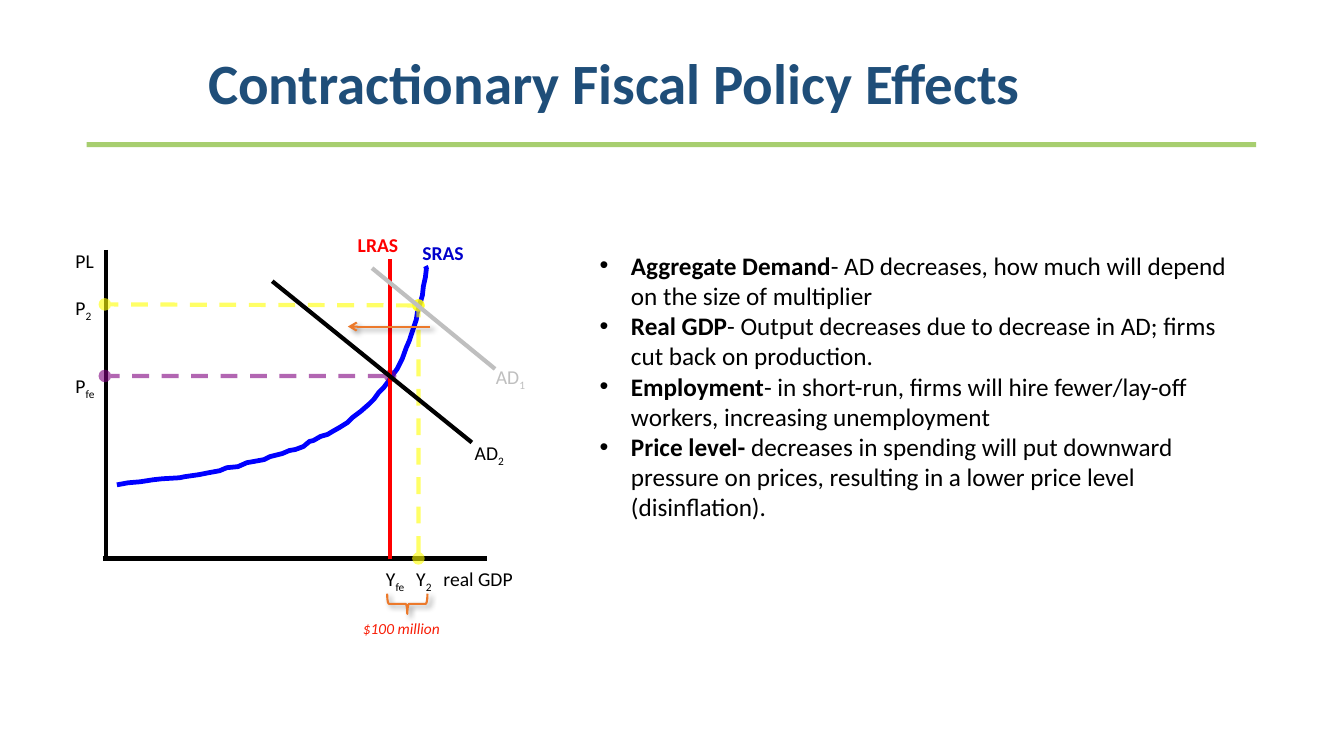
from lxml import etree
from pptx import Presentation
from pptx import util as u
from pptx.dml.color import RGBColor
from pptx.enum import dml, shapes, text
from pptx.oxml import ns

COLOURS = {
    "title": "1F4E79", "rule": "A7CE6F", "black": "000000", "red": "FF0000",
    "sras label": "0000CC", "sras": "0000FF", "purple": "800080",
    "yellow": "FFFF00", "grey": "BFBFBF", "orange": "EC792B", "gap": "F81D06",
}
RGB = {name: RGBColor.from_string(value) for name, value in COLOURS.items()}


def sub(parent, tag, **attributes):
    return etree.SubElement(parent, ns.qn(tag), attributes)


def cast_shadow(effects):
    """Fill an empty effect list with a soft shadow down to the right."""
    shadow = sub(effects, "a:outerShdw", blurRad=str(u.Pt(4)), dist=str(u.Pt(3)),
                 dir="2700000", rotWithShape="0")
    sub(sub(shadow, "a:srgbClr", val=COLOURS["black"]), "a:alpha", val="40000")


prs = Presentation()
prs.slide_width, prs.slide_height = u.Inches(13.33), u.Inches(7.5)
slide = prs.slides.add_slide(prs.slide_layouts[5])

# Title and rule
title = slide.shapes.title
title.left, title.top = u.Inches(1.09), u.Inches(0.55)
title.width, title.height = u.Inches(10), u.Inches(0.67)
title_frame = title.text_frame
title_frame.text = "Contractionary Fiscal Policy Effects"
title_frame.auto_size = text.MSO_AUTO_SIZE.NONE
title_frame.vertical_anchor = text.MSO_ANCHOR.TOP
title_frame.margin_left = title_frame.margin_right = u.Inches(0.05)
title_frame.margin_top = title_frame.margin_bottom = u.Inches(0.05)
heading = title_frame.paragraphs[0]
heading.alignment = text.PP_ALIGN.CENTER
heading.line_spacing = 0.8
heading.font.name, heading.font.size, heading.font.bold = "Calibri", u.Pt(40.7), True
heading.font.color.rgb = RGB["title"]

rule = slide.shapes.add_shape(shapes.MSO_SHAPE.RECTANGLE, u.Inches(0.86), u.Inches(1.41),
                              u.Inches(11.6), u.Inches(0.05))
rule.shadow.inherit = False
rule.fill.solid()
rule.fill.fore_color.rgb = RGB["rule"]
rule.line.fill.background()

# Short-run aggregate supply curve
sras_points = [
    (1.16, 4.81), (1.27, 4.79), (1.39, 4.78), (1.52, 4.76), (1.61, 4.75), (1.78, 4.74),
    (1.83, 4.73), (1.97, 4.71), (2.07, 4.69), (2.18, 4.67), (2.25, 4.64), (2.36, 4.63),
    (2.45, 4.59), (2.51, 4.58), (2.62, 4.56), (2.68, 4.53), (2.8, 4.5), (2.87, 4.47),
    (2.93, 4.46), (3.01, 4.43), (3.07, 4.38), (3.11, 4.37), (3.18, 4.33), (3.25, 4.31),
    (3.3, 4.28), (3.37, 4.24), (3.45, 4.19), (3.5, 4.14), (3.58, 4.08), (3.66, 4.01),
    (3.71, 3.96), (3.76, 3.89), (3.81, 3.84), (3.87, 3.76), (3.91, 3.7), (3.94, 3.66),
    (3.99, 3.56), (4.03, 3.45), (4.06, 3.38), (4.1, 3.26), (4.13, 3.17), (4.14, 3.1),
    (4.17, 3), (4.19, 2.93), (4.2, 2.84), (4.22, 2.75), (4.23, 2.66), (4.22, 2.64),
]
sras_emu = [(u.Inches(x), u.Inches(y)) for x, y in sras_points]
builder = slide.shapes.build_freeform(*sras_emu[0])
builder.add_line_segments(sras_emu[1:], close=False)
sras = builder.convert_to_shape()
sras.shadow.inherit = False
sras.fill.background()
sras.line.color.rgb = RGB["sras"]
sras.line.width = u.Pt(3.39)

# Axes, guides, curves and the arrow of the demand shift: start, end, colour, style
graph_lines = [
    ((1.05, 2.48), (1.05, 5.53), "black", "solid"),
    ((1.02, 5.54), (4.83, 5.54), "black", "solid"),
    ((3.87, 3.73), (1.04, 3.73), "purple", "guide"),
    ((4.15, 3.03), (1.04, 3.02), "yellow", "guide"),
    ((4.15, 5.54), (4.15, 3.03), "yellow", "guide"),
    ((3.87, 5.55), (3.87, 2.57), "red", "solid"),
    ((3.69, 2.66), (4.91, 3.66), "grey", "solid"),
    ((2.7, 2.79), (4.68, 4.39), "black", "solid"),
    ((4.27, 3.24), (3.45, 3.24), "orange", "arrow"),
]
for start, end, colour, style in graph_lines:
    line = slide.shapes.add_connector(shapes.MSO_CONNECTOR.STRAIGHT,
                                      *(u.Inches(n) for n in start + end))
    line.line.color.rgb = RGB[colour]
    line.line.width = u.Pt(1.5 if style == "arrow" else 3)
    properties = line._element.spPr
    outline = line.line._get_or_add_ln()
    effects = sub(properties, "a:effectLst")
    if style == "guide":
        line.line.dash_style = dml.MSO_LINE.DASH
        sub(outline.find(".//" + ns.qn("a:srgbClr")), "a:alpha", val="60000")
        sub(outline, "a:headEnd", type="oval")
        sub(outline, "a:tailEnd", type="oval")
    elif style == "arrow":
        sub(outline, "a:tailEnd", type="arrow")
        cast_shadow(effects)

# Brace under the output gap
brace = slide.shapes.add_shape(shapes.MSO_SHAPE.LEFT_BRACE, u.Inches(3.94), u.Inches(5.79),
                               u.Inches(0.2), u.Inches(0.4))
brace.rotation = 270
brace.fill.background()
brace.line.color.rgb = RGB["orange"]
brace.line.width = u.Pt(1.5)
brace.shadow.inherit = False
cast_shadow(brace._element.spPr.find(ns.qn("a:effectLst")))

# Graph labels: left, top, width, wording, subscript, colour
graph_labels = [
    (0.65, 2.42, 0.7, "PL", "", "black"),
    (4.09, 2.34, 0.77, "SRAS", "", "sras label"),
    (3.45, 2.26, 0.77, "LRAS", "", "red"),
    (4.3, 5.58, 1.16, "real GDP", "", "black"),
    (0.65, 3.66, 0.49, "P", "fe", "black"),
    (3.73, 5.58, 0.51, "Y", "fe", "black"),
    (0.65, 2.89, 0.49, "P", "2", "black"),
    (4.03, 5.58, 0.49, "Y", "2", "black"),
    (4.82, 3.57, 0.76, "AD", "1", "grey"),
    (4.61, 4.33, 0.76, "AD", "2", "black"),
    (3.5, 6.09, 1.25, "$100 million", "", "gap"),
]
for left, top, width, wording, subscript, colour in graph_labels:
    is_gap = colour == "gap"
    label = slide.shapes.add_textbox(u.Inches(left), u.Inches(top), u.Inches(width),
                                     u.Inches(0.29 if is_gap else 0.34))
    label.text_frame.word_wrap = True
    paragraph = label.text_frame.paragraphs[0]
    paragraph.add_run().text = wording
    if subscript:
        lowered = paragraph.add_run()
        lowered.text = subscript
        lowered.font._element.set("baseline", "-25000")
    paragraph.font.name = "Calibri"
    paragraph.font.size = u.Pt(11 if is_gap else 14)
    paragraph.font.bold = wording in ("SRAS", "LRAS")
    paragraph.font.italic = is_gap
    paragraph.font.color.rgb = RGB[colour]

# Effects on the economy
policy_effects = [
    ("Aggregate Demand", "- AD decreases, how much will depend on the size of multiplier"),
    ("Real GDP", "- Output decreases due to decrease in AD; firms cut back on production."),
    ("Employment", "- in short-run, firms will hire fewer/lay-off workers, "
                   "increasing unemployment"),
    ("Price level- ", "decreases in spending will put downward pressure on prices, "
                      "resulting in a lower price level (disinflation)."),
]
effects_box = slide.shapes.add_textbox(u.Inches(5.85), u.Inches(2.43),
                                       u.Inches(6.67), u.Inches(2.83))
effects_frame = effects_box.text_frame
effects_frame.word_wrap = True
for index, (topic, explanation) in enumerate(policy_effects):
    paragraph = effects_frame.add_paragraph() if index else effects_frame.paragraphs[0]
    bullet = paragraph._p.get_or_add_pPr()
    bullet.set("marL", str(u.Inches(0.31)))
    bullet.set("indent", str(u.Inches(-0.31)))
    sub(bullet, "a:buFont", typeface="Arial")
    sub(bullet, "a:buChar", char="•")
    topic_run = paragraph.add_run()
    topic_run.text = topic
    topic_run.font.bold = True
    paragraph.add_run().text = explanation
    paragraph.font.name, paragraph.font.size = "Calibri", u.Pt(18)
    paragraph.font.color.rgb = RGB["black"]

prs.save("out.pptx")
